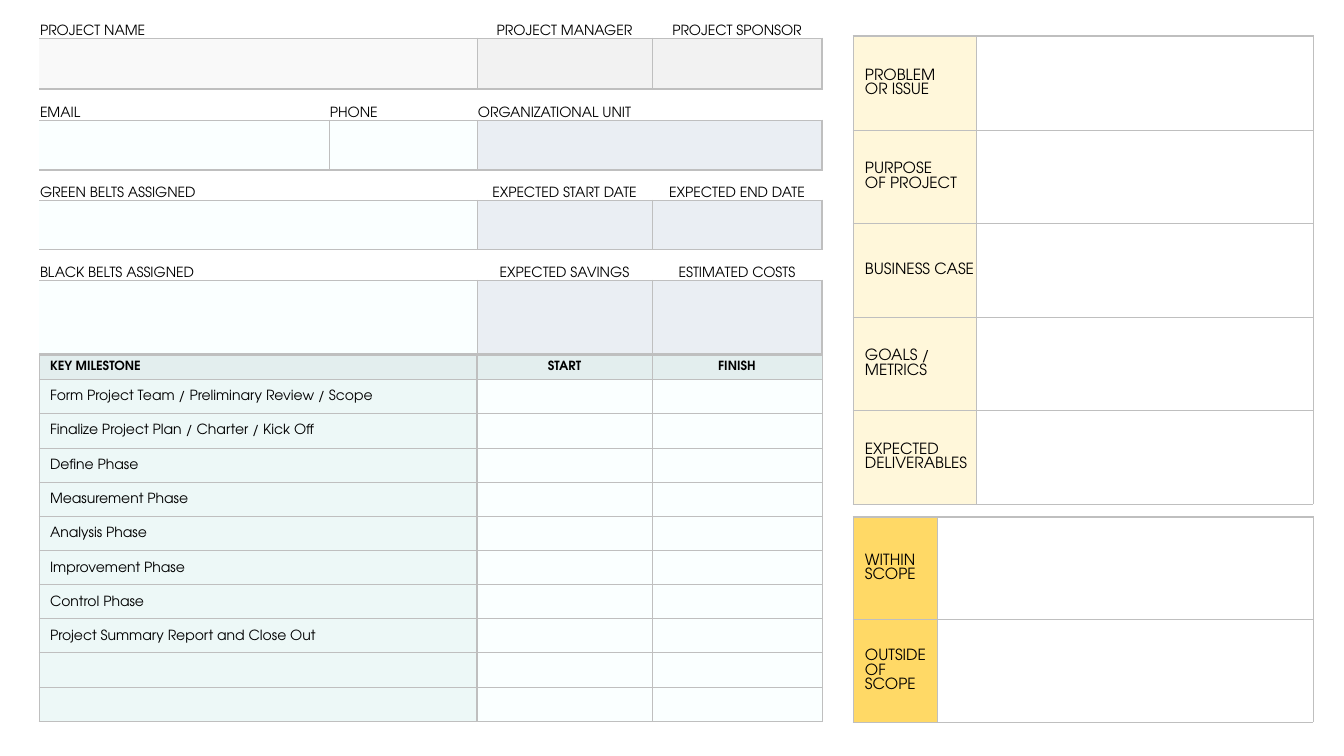
"""Build a one-page project charter slide made of four form tables."""
from dataclasses import dataclass, replace
from typing import NamedTuple, Optional

from lxml import etree
from pptx import Presentation
from pptx.dml.color import RGBColor
from pptx.enum.text import MSO_ANCHOR, PP_ALIGN
from pptx.oxml.ns import qn
from pptx.slide import Slide
from pptx.table import Table, _Cell
from pptx.util import Emu, Pt

LEFT, CENTER = PP_ALIGN.LEFT, PP_ALIGN.CENTER
MIDDLE, BOTTOM = MSO_ANCHOR.MIDDLE, MSO_ANCHOR.BOTTOM
SLIDE_WIDTH, SLIDE_HEIGHT = 1344, 756
EMU_PER_PX = 12192000 / SLIDE_WIDTH


@dataclass(frozen=True)
class Theme:
    font: str = "TeX Gyre Adventor"
    text: str = "000000"
    rule: str = "BFBFBF"
    white: str = "FFFFFF"
    name: str = "F9F9F9"
    people: str = "F2F2F2"
    entry: str = "FAFFFF"
    figures: str = "EAEEF3"
    topic: str = "FFF7DA"
    scope: str = "FFD966"
    heading: str = "E3EEEE"
    milestone: str = "EDF8F7"
    heading_size: int = 9
    body_size: int = 10
    topic_size: int = 11


THEME = Theme()


class Borders(NamedTuple):
    left: float = 0.5
    right: float = 0.5
    top: float = 0.5
    bottom: float = 0.5


@dataclass(frozen=True)
class CellStyle:
    fill: Optional[str] = None
    borders: Borders = Borders()
    size: int = THEME.body_size
    bold: bool = False
    align: PP_ALIGN = LEFT
    anchor: MSO_ANCHOR = MIDDLE
    inset: int = 1


@dataclass(frozen=True)
class Field:
    label: str
    column: int
    fill: str
    span: int = 1
    align: PP_ALIGN = LEFT


@dataclass(frozen=True)
class Grid:
    left: int
    top: int
    columns: list[int]
    rows: list[int]


FIELD_ROWS = [
    [Field("PROJECT NAME", 1, THEME.name, 2),
     Field("PROJECT MANAGER", 3, THEME.people, align=CENTER),
     Field("PROJECT SPONSOR", 4, THEME.people, align=CENTER)],
    [Field("EMAIL", 1, THEME.entry),
     Field("PHONE", 2, THEME.entry),
     Field("ORGANIZATIONAL UNIT", 3, THEME.figures, 2)],
    [Field("GREEN BELTS ASSIGNED", 1, THEME.entry, 2),
     Field("EXPECTED START DATE", 3, THEME.figures, align=CENTER),
     Field("EXPECTED END DATE", 4, THEME.figures, align=CENTER)],
    [Field("BLACK BELTS ASSIGNED", 1, THEME.entry, 2),
     Field("EXPECTED SAVINGS", 3, THEME.figures, align=CENTER),
     Field("ESTIMATED COSTS", 4, THEME.figures, align=CENTER)],
]
TOPICS = ["PROBLEM\nOR ISSUE", "PURPOSE\nOF PROJECT", "BUSINESS CASE",
          "GOALS / METRICS", "EXPECTED DELIVERABLES"]
SCOPES = ["WITHIN SCOPE", "OUTSIDE OF SCOPE"]
HEADINGS = ["KEY MILESTONE", "START", "FINISH"]
MILESTONES = ["Form Project Team / Preliminary Review / Scope",
              "Finalize Project Plan / Charter / Kick Off",
              "Define Phase", "Measurement Phase", "Analysis Phase",
              "Improvement Phase", "Control Phase",
              "Project Summary Report and Close Out", "", ""]


def px(length: int) -> Emu:
    return Emu(round(length * EMU_PER_PX))


def split(length: int, count: int) -> list[int]:
    edges = [round(length * step / count) for step in range(count + 1)]
    return [end - start for start, end in zip(edges, edges[1:])]


def add_grid(slide: Slide, grid: Grid) -> Table:
    frame = slide.shapes.add_table(
        len(grid.rows), len(grid.columns), px(grid.left), px(grid.top),
        px(sum(grid.columns)), px(sum(grid.rows)))
    table = frame.table
    table.first_row = table.horz_banding = False
    for column, width in zip(table.columns, grid.columns):
        column.width = px(width)
    for row, height in zip(table.rows, grid.rows):
        row.height = px(height)
    return table


def set_borders(cell: _Cell, borders: Borders) -> None:
    properties = cell._tc.get_or_add_tcPr()
    for tag, width in zip(("a:lnL", "a:lnR", "a:lnT", "a:lnB"), borders):
        line = etree.SubElement(properties, qn(tag), w=str(Pt(width)))
        if width:
            solid = etree.SubElement(line, qn("a:solidFill"))
            etree.SubElement(solid, qn("a:srgbClr"), val=THEME.rule)
        else:
            etree.SubElement(line, qn("a:noFill"))


def fill_cell(cell: _Cell, style: CellStyle, text: str = "") -> None:
    set_borders(cell, style.borders)
    if style.fill:
        cell.fill.solid()
        cell.fill.fore_color.rgb = RGBColor.from_string(style.fill)
    else:
        cell.fill.background()
    cell.vertical_anchor = style.anchor
    cell.margin_left = px(style.inset)
    cell.margin_right = cell.margin_top = px(1)
    cell.margin_bottom = 0
    if not text:
        return
    for index, line in enumerate(text.split("\n")):
        frame = cell.text_frame
        paragraph = frame.add_paragraph() if index else frame.paragraphs[0]
        paragraph.alignment = style.align
        run = paragraph.add_run()
        run.text = line
        run.font.name = THEME.font
        run.font.size = Pt(style.size)
        run.font.bold = style.bold
        run.font.color.rgb = RGBColor.from_string(THEME.text)


def add_project_fields(slide: Slide) -> None:
    table = add_grid(slide, Grid(18, 3, [21, 290, 148, 175, 170],
                                 [35, 51, 31, 50, 30, 50, 30, 74]))
    for row in range(len(table.rows)):
        fill_cell(table.cell(row, 0), CellStyle(borders=Borders(0, 0, 0, 0)))
    table.cell(0, 0).merge(table.cell(len(table.rows) - 1, 0))
    for index, fields in enumerate(FIELD_ROWS):
        row = 2 * index
        label_borders = Borders(0, 0, 1 if index else 0, 0.5)
        for field in fields:
            label = CellStyle(borders=label_borders, align=field.align, anchor=BOTTOM)
            first, last = field.column, field.column + field.span - 1
            borders = Borders(0 if first == 1 else 0.5, 1 if last == 4 else 0.5, 0.5, 1)
            for column in range(first, last + 1):
                fill_cell(table.cell(row, column), label, field.label if column == first else "")
                fill_cell(table.cell(row + 1, column), CellStyle(field.fill, borders))
            if field.span > 1:
                for offset in (0, 1):
                    table.cell(row + offset, first).merge(table.cell(row + offset, last))


def add_topics(slide: Slide, grid: Grid, topics: list[str], fill: str) -> None:
    table = add_grid(slide, grid)
    for row, topic in enumerate(topics):
        borders = Borders(top=0.5 if row else 1.5)
        fill_cell(table.cell(row, 0),
                  CellStyle(fill, borders, THEME.topic_size, inset=12), topic)
        fill_cell(table.cell(row, 1), CellStyle(THEME.white, borders))


def add_milestones(slide: Slide) -> None:
    table = add_grid(slide, Grid(39, 355, [438, 175, 170], [24] + split(343, len(MILESTONES))))
    column_borders = [Borders(right=2), Borders(left=2), Borders()]
    for column, (heading, borders) in enumerate(zip(HEADINGS, column_borders)):
        body = CellStyle(THEME.entry if column else THEME.milestone, borders,
                         align=CENTER if column else LEFT, inset=1 if column else 11)
        fill_cell(table.cell(0, column),
                  replace(body, fill=THEME.heading, borders=borders._replace(top=1.5),
                          size=THEME.heading_size, bold=True), heading)
        for row, milestone in enumerate(MILESTONES, start=1):
            fill_cell(table.cell(row, column), body, "" if column else milestone)


def main() -> None:
    presentation = Presentation()
    presentation.slide_width, presentation.slide_height = px(SLIDE_WIDTH), px(SLIDE_HEIGHT)
    slide = presentation.slides.add_slide(presentation.slide_layouts[6])
    add_project_fields(slide)
    add_topics(slide, Grid(853, 36, [123, 337], split(468, 5)), TOPICS, THEME.topic)
    add_topics(slide, Grid(853, 517, [84, 376], split(205, 2)), SCOPES, THEME.scope)
    add_milestones(slide)
    presentation.save("out.pptx")


if __name__ == "__main__":
    main()
